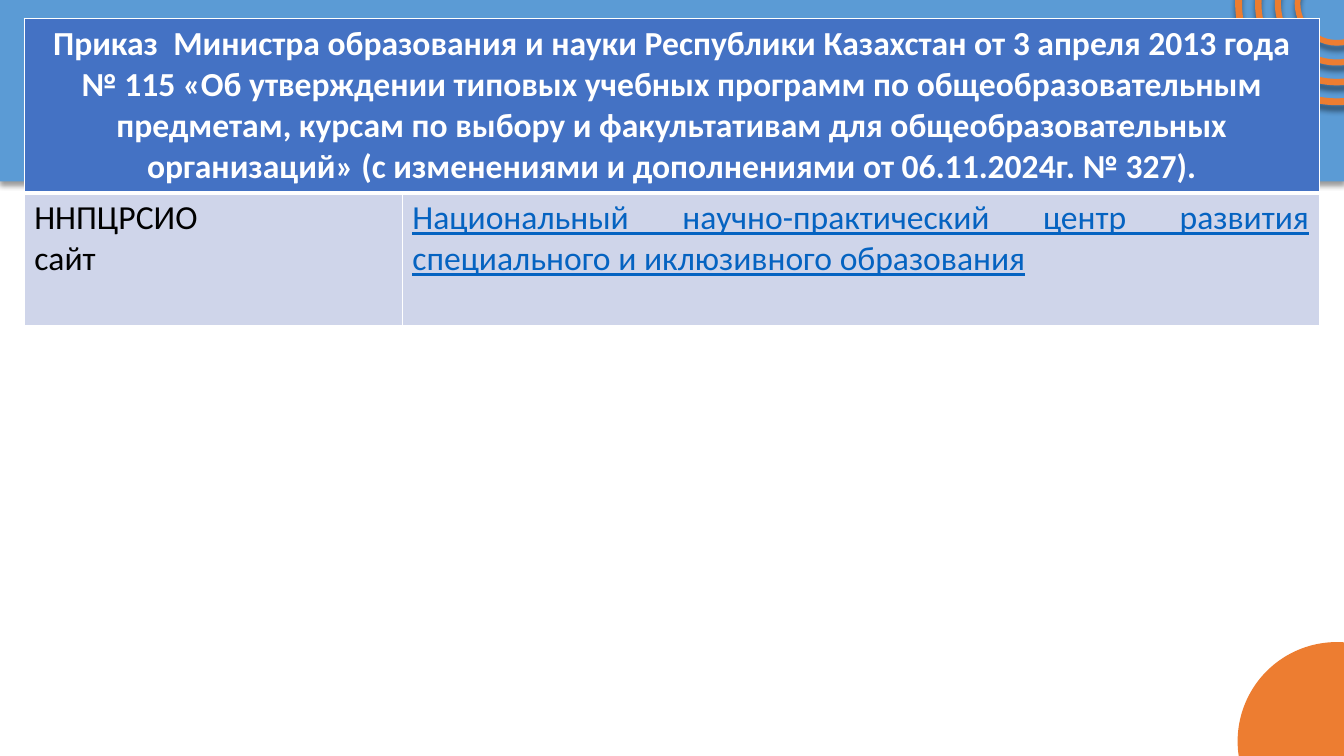
"""Builds a slide with a decree heading and a two-column resource table."""
import pptx
import pptx.util
import pptx.dml.color
import pptx.enum.shapes
import pptx.enum.text
import pptx.oxml
import pptx.oxml.ns

Cm, Pt = pptx.util.Cm, pptx.util.Pt
RGBColor = pptx.dml.color.RGBColor
MSO_SHAPE = pptx.enum.shapes.MSO_SHAPE
PP_ALIGN = pptx.enum.text.PP_ALIGN

HEADING = ("Приказ  Министра образования и науки Республики Казахстан "
           "от 3 апреля 2013 года № 115 «Об утверждении типовых учебных программ "
           "по общеобразовательным предметам, курсам по выбору и факультативам "
           "для общеобразовательных организаций» "
           "(с изменениями и дополнениями от 06.11.2024г. № 327).")
SITE = ["ННПЦРСИО", "сайт"]
CENTRE = ["Национальный научно-практический центр развития "
          "специального и иклюзивного образования"]

WHITE = RGBColor(0xFF, 0xFF, 0xFF)
BLACK = RGBColor(0x00, 0x00, 0x00)
SKY = RGBColor(0x5B, 0x9B, 0xD5)
ORANGE = RGBColor(0xED, 0x7D, 0x31)
BLUE = RGBColor(0x44, 0x72, 0xC4)
PALE = RGBColor(0xCF, 0xD5, 0xEA)
LINK = RGBColor(0x05, 0x63, 0xC1)

WIDTH, HEIGHT = 33.87, 19.05
BAND_HEIGHT = 4.57
ROUND_X, DISC_Y, RING_Y = 33.69, 18.68, 0.09
DISC_SIZE = 5
RING_SIZES = [5, 4, 3, 2]
TABLE_X, TABLE_Y = 0.61, 0.46
COLUMNS = [9.53, 23.11]
ROWS = [4.4, 3.35]


def add_shadow(s, blur, dist, alpha):
    s._element.spPr.append(pptx.oxml.parse_xml(
        f'<a:effectLst {pptx.oxml.ns.nsdecls("a")}>'
        f'<a:outerShdw blurRad="{Pt(blur)}" dist="{Pt(dist)}" dir="5400000" rotWithShape="0">'
        f'<a:srgbClr val="000000"><a:alpha val="{alpha * 1000}"/></a:srgbClr>'
        '</a:outerShdw></a:effectLst>'))


def add_plain(shapes, kind, x, y, w, h, color):
    s = shapes.add_shape(kind, Cm(x), Cm(y), Cm(w), Cm(h))
    s.fill.solid()
    s.fill.fore_color.rgb = color
    s.line.fill.background()
    return s


def add_round(shapes, kind, centre_y, size):
    return add_plain(shapes, kind, ROUND_X - size / 2, centre_y - size / 2, size, size, ORANGE)


def style_cell(cell, fill, top, bottom):
    tcPr = cell._tc.get_or_add_tcPr()
    for side, width in (("L", 1), ("R", 1), ("T", top), ("B", bottom)):
        tcPr.append(pptx.oxml.parse_xml(
            f'<a:ln{side} {pptx.oxml.ns.nsdecls("a")} w="{Pt(width)}">'
            f'<a:solidFill><a:srgbClr val="{WHITE}"/></a:solidFill></a:ln{side}>'))
    cell.fill.solid()
    cell.fill.fore_color.rgb = fill


def write_cell(cell, lines, align, color, bold=False, underline=False):
    tf = cell.text_frame
    for i, line in enumerate(lines):
        p = tf.add_paragraph() if i else tf.paragraphs[0]
        p.alignment = align
        r = p.add_run()
        r.text = line
        r.font.name = "Calibri"
        r.font.size = Pt(24)
        r.font.bold = bold
        r.font.underline = underline
        r.font.color.rgb = color


def add_decree_table(shapes):
    table = shapes.add_table(len(ROWS), len(COLUMNS), Cm(TABLE_X), Cm(TABLE_Y),
                             Cm(sum(COLUMNS)), Cm(sum(ROWS))).table
    for column, width in zip(table.columns, COLUMNS):
        column.width = Cm(width)
    for row, height in zip(table.rows, ROWS):
        row.height = Cm(height)
    for i in range(len(COLUMNS)):
        style_cell(table.cell(0, i), BLUE, 1, 3)
        style_cell(table.cell(1, i), PALE, 3, 1)
    table.cell(0, 0).merge(table.cell(0, 1))
    write_cell(table.cell(0, 0), [HEADING], PP_ALIGN.CENTER, WHITE, bold=True)
    write_cell(table.cell(1, 0), SITE, PP_ALIGN.JUSTIFY, BLACK)
    write_cell(table.cell(1, 1), CENTRE, PP_ALIGN.JUSTIFY, LINK, underline=True)


def main():
    prs = pptx.Presentation()
    prs.slide_width, prs.slide_height = Cm(WIDTH), Cm(HEIGHT)
    shapes = prs.slides.add_slide(prs.slide_layouts[6]).shapes

    band = add_plain(shapes, MSO_SHAPE.RECTANGLE, 0, 0, WIDTH, BAND_HEIGHT, SKY)
    add_shadow(band, 4, 3, 40)
    disc = add_round(shapes, MSO_SHAPE.OVAL, DISC_Y, DISC_SIZE)
    disc.shadow.inherit = False
    for size in RING_SIZES:
        ring = add_round(shapes, MSO_SHAPE.DONUT, RING_Y, size)
        ring.adjustments[0] = 0.01
        ring.line.color.rgb = ORANGE
        ring.line.width = Pt(3.5)
        add_shadow(ring, 4, 4, 43)

    add_decree_table(shapes)
    prs.save("out.pptx")


if __name__ == "__main__":
    main()
